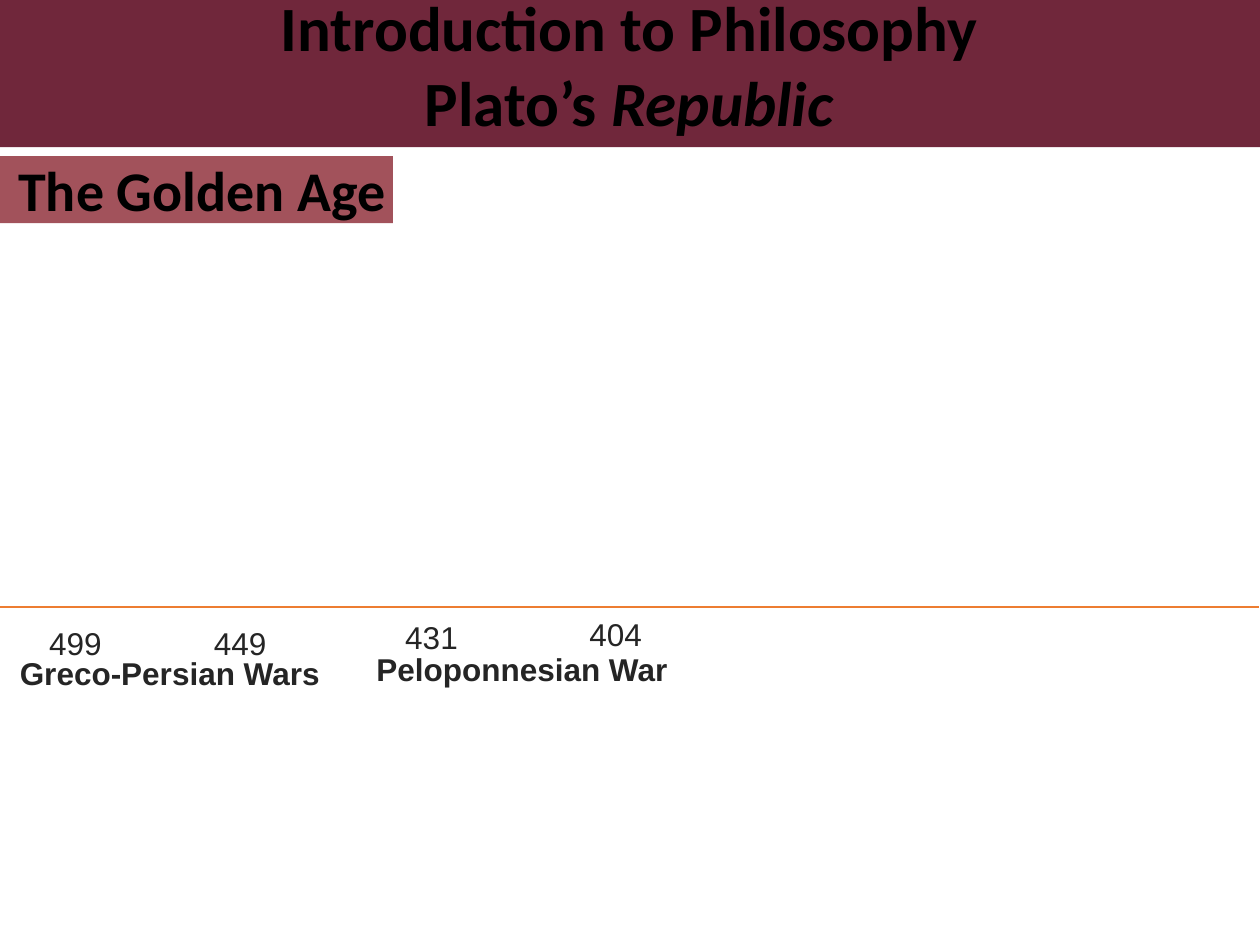
from dataclasses import dataclass

from lxml.etree import SubElement
from pptx import Presentation
from pptx.dml.color import RGBColor
from pptx.enum.shapes import MSO_CONNECTOR, MSO_SHAPE
from pptx.enum.text import MSO_AUTO_SIZE, PP_ALIGN
from pptx.oxml.ns import qn
from pptx.slide import Slide
from pptx.util import Cm, Pt

BLACK = RGBColor(0x00, 0x00, 0x00)
CHARCOAL = RGBColor(0x25, 0x25, 0x25)
BURGUNDY = RGBColor(0x70, 0x27, 0x3B)
ROSE = RGBColor(0xA2, 0x52, 0x5B)
ORANGE = RGBColor(0xED, 0x7D, 0x31)

YEAR = {"name": "Arial", "size": Pt(18), "bold": False}
EVENT = {**YEAR, "bold": True}
TITLE = {"name": "Calibri", "size": Pt(36), "bold": True}
HEADING = {**TITLE, "size": Pt(32)}
ITALIC = {**TITLE, "italic": True}


@dataclass(frozen=True)
class Box:
    left: float
    top: float
    width: float
    height: float

    def lengths(self) -> tuple[Cm, Cm, Cm, Cm]:
        return Cm(self.left), Cm(self.top), Cm(self.width), Cm(self.height)


@dataclass(frozen=True)
class Run:
    text: str
    font: dict


@dataclass(frozen=True)
class Label:
    box: Box
    lines: list[list[Run]]
    color: RGBColor = CHARCOAL
    wrap: bool = False
    align: PP_ALIGN = PP_ALIGN.LEFT


def year(text: str, left: float, top: float) -> Label:
    return Label(Box(left, top, 1.57, 1.02), [[Run(text, YEAR)]])


def event(text: str, left: float, top: float, width: float) -> Label:
    return Label(Box(left, top, width, 1.02), [[Run(text, EVENT)]])


def banner(box: Box, lines: list[list[Run]]) -> Label:
    return Label(box, lines, BLACK, True, PP_ALIGN.CENTER)


TIMELINE = [
    year("499", 0.74, 12.45),
    year("449", 4.06, 12.45),
    year("431", 7.92, 12.34),
    year("404", 11.63, 12.27),
    event("Peloponnesian War", 7.34, 12.98, 6.43),
    event("Greco-Persian Wars", 0.15, 13.06, 6.6),
]
BANDS = [
    (Box(0, -0.18, 25.4, 3.15), BURGUNDY),
    (Box(0, 3.15, 7.92, 1.35), ROSE),
]
BANNERS = [
    banner(
        Box(2.97, -0.36, 19.43, 3.33),
        [
            [Run("Introduction to Philosophy", TITLE)],
            [Run("Plato’s ", TITLE), Run("Republic", ITALIC)],
        ],
    ),
    banner(Box(0.05, 3.02, 8.05, 1.63), [[Run("The Golden Age", HEADING)]]),
]


def draw_label(s: Slide, label: Label) -> None:
    tf = s.shapes.add_textbox(*label.box.lengths()).text_frame
    tf.word_wrap = label.wrap
    tf.auto_size = MSO_AUTO_SIZE.SHAPE_TO_FIT_TEXT
    for i, line in enumerate(label.lines):
        p = tf.add_paragraph() if i else tf.paragraphs[0]
        p.alignment = label.align
        for run in line:
            r = p.add_run()
            r.text = run.text
            for name, value in run.font.items():
                setattr(r.font, name, value)
            r.font.color.rgb = label.color


def draw_band(s: Slide, box: Box, color: RGBColor) -> None:
    sp = s.shapes.add_shape(MSO_SHAPE.RECTANGLE, *box.lengths())
    sp.shadow.inherit = False
    sp.fill.solid()
    sp.fill.fore_color.rgb = color
    sp.line.fill.background()


def draw_axis(s: Slide, left: float, right: float, y: float) -> None:
    axis = s.shapes.add_connector(
        MSO_CONNECTOR.STRAIGHT, Cm(left), Cm(y), Cm(right), Cm(y)
    )
    axis.line.color.rgb = ORANGE
    axis.line.width = Pt(1.5)
    SubElement(axis._element.spPr, qn("a:effectLst"))


def main() -> None:
    prs = Presentation()
    prs.slide_width, prs.slide_height = Cm(25.4), Cm(19.05)
    s = prs.slides.add_slide(prs.slide_layouts[6])
    draw_axis(s, -0.03, 25.37, 12.24)
    for label in TIMELINE:
        draw_label(s, label)
    for (box, color), label in zip(BANDS, BANNERS):
        draw_band(s, box, color)
        draw_label(s, label)
    prs.save("out.pptx")


if __name__ == "__main__":
    main()
